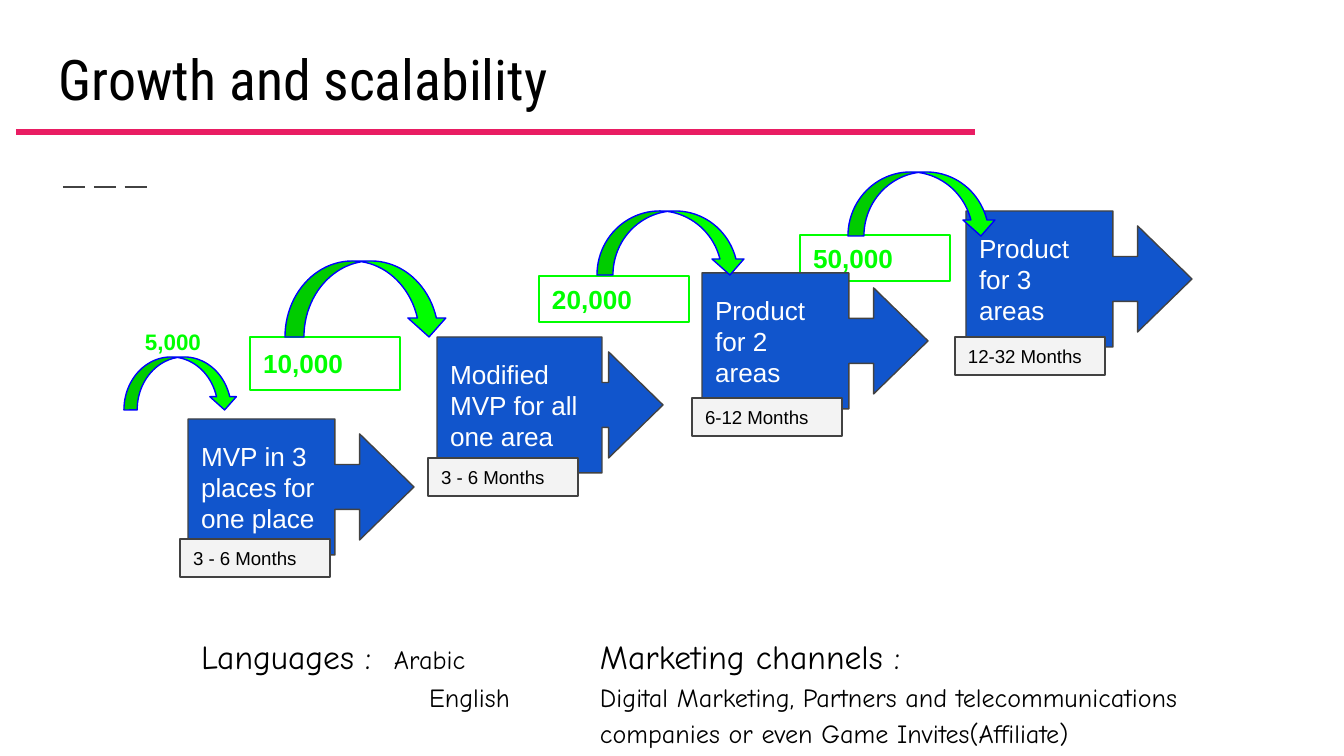
from dataclasses import dataclass

from lxml.etree import SubElement
from pptx import Presentation
from pptx.dml.color import RGBColor
from pptx.enum.dml import MSO_LINE
from pptx.enum.shapes import MSO_CONNECTOR, MSO_SHAPE
from pptx.enum.text import MSO_ANCHOR
from pptx.oxml.ns import qn
from pptx.util import Pt

PX = 914400 / 134.4
BLUE, WHITE, BLACK = "1155CC", "FFFFFF", "000000"
GREEN, GREY, PALE, PINK = "00FF00", "424242", "F3F3F3", "E91D63"


@dataclass
class Box:
    x: int
    y: int
    w: int
    h: int


@dataclass
class Style:
    size: int
    color: str
    name: str = "Arial"
    bold: bool = False


@dataclass
class Stage:
    text: str
    step: Box
    neck: float
    time: str
    tag: Box
    arc: Box


@dataclass
class Count:
    text: str
    box: Box


STAGES = [
    Stage("MVP in 3 places for one place", Box(188, 419, 226, 136), 0.65,
          "3 - 6 Months", Box(180, 539, 150, 38), Box(124, 357, 114, 53)),
    Stage("Modified MVP for all one area", Box(437, 337, 226, 136), 0.73,
          "3 - 6 Months", Box(428, 458, 150, 38), Box(285, 261, 163, 76)),
    Stage("Product for 2 areas", Box(702, 273, 226, 136), 0.65,
          "6-12 Months", Box(692, 398, 150, 38), Box(597, 211, 149, 64)),
    Stage("Product for 3 areas", Box(966, 211, 226, 136), 0.65,
          "12-32 Months", Box(955, 337, 150, 38), Box(848, 172, 149, 64)),
]
COUNTS = [
    Count("10,000", Box(250, 337, 150, 53)),
    Count("20,000", Box(539, 276, 150, 46)),
    Count("50,000", Box(800, 235, 150, 46)),
]

TITLE = Style(30, BLACK, "Roboto Condensed")
HEAD = Style(18, BLACK, "Comic Neue")
NOTE = Style(14, BLACK, "Comic Neue")
STEP = Style(14, WHITE)
TAG = Style(10, BLACK)
SUM = Style(14, GREEN, bold=True)
START = Style(12, GREEN, bold=True)


def emu(px: int) -> int:
    return round(px * PX)


def rgb(code: str) -> RGBColor:
    return RGBColor.from_string(code)


def place(box: Box) -> list[int]:
    return [emu(v) for v in (box.x, box.y, box.w, box.h)]


def add_run(para, text: str, style: Style) -> None:
    run = para.add_run()
    run.text = text
    looks = {"size": Pt(style.size), "name": style.name, "bold": style.bold}
    for key, val in looks.items():
        setattr(run.font, key, val)
    run.font.color.rgb = rgb(style.color)


def set_frame(frame, anchor=MSO_ANCHOR.MIDDLE) -> None:
    looks = {"word_wrap": True, "vertical_anchor": anchor}
    looks |= {f"margin_{side}": emu(13) for side in ("left", "right", "top", "bottom")}
    for key, val in looks.items():
        setattr(frame, key, val)


def add_form(slide, kind, box: Box, fill: str = "", line: str = GREY,
             text: str = "", style: Style = STEP, adjust: tuple = ()) -> None:
    form = slide.shapes.add_shape(kind, *place(box))
    form.shadow.inherit = False
    if fill:
        form.fill.solid()
        form.fill.fore_color.rgb = rgb(fill)
    else:
        form.fill.background()
    form.line.color.rgb = rgb(line)
    form.line.width = Pt(0.75)
    for i, val in enumerate(adjust):
        form.adjustments[i] = val
    if text:
        set_frame(form.text_frame)
        para = form.text_frame.paragraphs[0]
        para.alignment = 1
        add_run(para, text, style)


def add_text(slide, box: Box, rows: list, anchor=MSO_ANCHOR.TOP, gap: float = 1.0) -> list:
    frame = slide.shapes.add_textbox(*place(box)).text_frame
    set_frame(frame, anchor)
    for i, row in enumerate(rows):
        para = frame.add_paragraph() if i else frame.paragraphs[0]
        para.line_spacing = gap
        for text, style in row:
            add_run(para, text, style)
    return list(frame.paragraphs)


def add_rule(slide, x: int, y: int, end: int, color: str, width: float, dash=None) -> None:
    rule = slide.shapes.add_connector(MSO_CONNECTOR.STRAIGHT, emu(x), emu(y), emu(end), emu(y))
    rule.line.color.rgb = rgb(color)
    rule.line.width = Pt(width)
    if dash:
        rule.line.dash_style = dash
    SubElement(rule._element.spPr, qn("a:effectLst"))


def main() -> None:
    deck = Presentation()
    deck.slide_width, deck.slide_height = emu(1344), emu(756)
    slide = deck.slides.add_slide(deck.slide_layouts[6])

    # Title and rules
    add_rule(slide, 63, 187, 153, GREY, 1.5, MSO_LINE.LONG_DASH)
    add_text(slide, Box(46, 17, 1253, 108), [[("Growth and scalability", TITLE)]],
             MSO_ANCHOR.BOTTOM)
    add_rule(slide, 16, 132, 975, PINK, 3)

    # User counts, behind the steps
    for count in COUNTS:
        add_form(slide, MSO_SHAPE.RECTANGLE, count.box, line=GREEN, text=count.text, style=SUM)
    add_text(slide, Box(132, 315, 114, 53), [[("5,000", START)]])

    # Steps, then their times and arcs on top
    for stage in STAGES:
        add_form(slide, MSO_SHAPE.RIGHT_ARROW_CALLOUT, stage.step, BLUE, text=stage.text,
                 adjust=(0.33, 0.39, 0.4, stage.neck))
    for stage in STAGES:
        add_form(slide, MSO_SHAPE.RECTANGLE, stage.tag, PALE, text=stage.time, style=TAG)
        add_form(slide, MSO_SHAPE.CURVED_DOWN_ARROW, stage.arc, GREEN, "0000FF",
                 adjust=(0.25, 0.5, 0.25))

    # Languages, aligned by a tab stop and an indent
    first, second = add_text(slide, Box(188, 617, 368, 136), [
        [("Languages :\t", HEAD), ("Arabic", NOTE)],
        [("English", NOTE)],
    ], gap=1.15)
    tabs = SubElement(first._p.get_or_add_pPr(), qn("a:tabLst"))
    SubElement(tabs, qn("a:tab"), pos=str(emu(193)), algn="l")
    second._p.get_or_add_pPr().set("marL", str(emu(228)))

    # Marketing channels
    add_text(slide, Box(587, 617, 692, 136), [
        [("Marketing channels :", HEAD)],
        [("Digital Marketing, Partners and telecommunications", NOTE)],
        [("companies or even Game Invites(Affiliate)", NOTE)],
    ], gap=1.15)

    deck.save("out.pptx")


if __name__ == "__main__":
    main()
